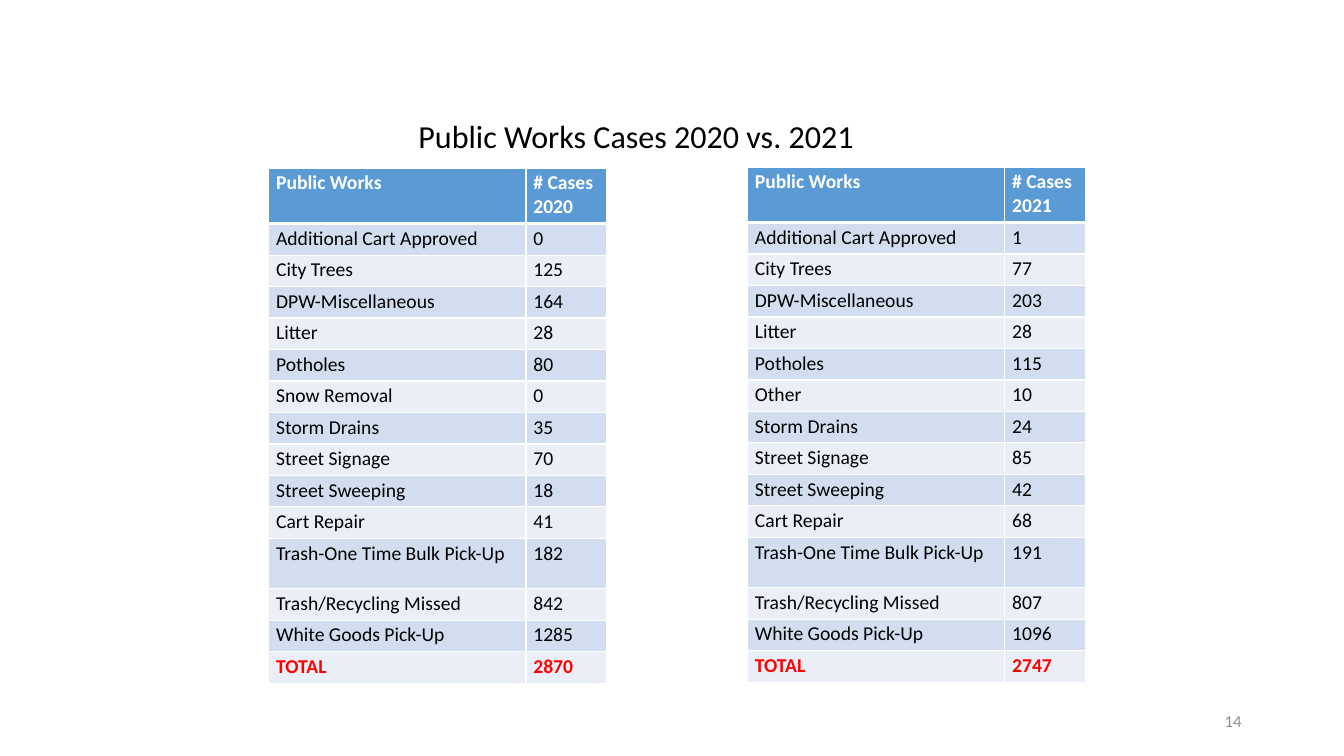
from lxml.etree import SubElement
from pptx import Presentation
from pptx.dml.color import RGBColor
from pptx.enum.text import MSO_ANCHOR, PP_ALIGN
from pptx.oxml.ns import qn
from pptx.util import Pt

PX = 9525
FONT = "Calibri"
WHITE = RGBColor(0xFF, 0xFF, 0xFF)
BLACK = RGBColor(0x00, 0x00, 0x00)
RED = RGBColor(0xFF, 0x00, 0x00)
GREY = RGBColor(0x8C, 0x8C, 0x8C)
HEADER_BLUE = RGBColor(0x5B, 0x9B, 0xD5)
BAND_DARK = RGBColor(0xD2, 0xDE, 0xEF)
BAND_LIGHT = RGBColor(0xEA, 0xEF, 0xF7)

COLUMN_WIDTHS = (245, 77)
HEADER_HEIGHT, ROW_HEIGHT, TALL_HEIGHT = 53, 30, 48
TALL_CATEGORY = "Trash-One Time Bulk Pick-Up"
CELL_FORMAT = {"margin_left": 7 * PX, "margin_right": 7 * PX,
               "margin_top": 3 * PX, "margin_bottom": 3 * PX}
HEADER_FONT = {"name": FONT, "size": Pt(14), "bold": True}
BODY_FONT = {**HEADER_FONT, "bold": False}

CASES_2020 = [
    ("Additional Cart Approved", 0), ("City Trees", 125),
    ("DPW-Miscellaneous", 164), ("Litter", 28), ("Potholes", 80),
    ("Snow Removal", 0), ("Storm Drains", 35), ("Street Signage", 70),
    ("Street Sweeping", 18), ("Cart Repair", 41), (TALL_CATEGORY, 182),
    ("Trash/Recycling Missed", 842), ("White Goods Pick-Up", 1285),
    ("TOTAL", 2870),
]
COUNTS_2021 = (1, 77, 203, 28, 115, 10, 24, 85, 42, 68, 191, 807, 1096, 2747)
CASES_2021 = [("Other" if category == "Snow Removal" else category, count)
              for (category, _), count in zip(CASES_2020, COUNTS_2021)]


def apply_format(target, values):
    for name, value in values.items():
        setattr(target, name, value)


def add_label(slide, box, wording, color, font, frame_format, paragraph_format):
    label = slide.shapes.add_textbox(*(length * PX for length in box))
    frame = label.text_frame
    apply_format(frame, {"word_wrap": True, **frame_format})
    paragraph = frame.paragraphs[0]
    apply_format(paragraph, paragraph_format)
    run = paragraph.add_run()
    run.text = wording
    apply_format(run.font, {"name": FONT, **font})
    run.font.color.rgb = color


def add_title(slide, box):
    add_label(slide, box, "Public Works Cases 2020 vs. 2021", BLACK,
              {"size": Pt(22.9)},
              {"vertical_anchor": MSO_ANCHOR.BOTTOM,
               "margin_left": 6 * PX, "margin_right": 6 * PX,
               "margin_top": 3 * PX, "margin_bottom": 3 * PX},
              {"alignment": PP_ALIGN.CENTER, "line_spacing": 0.9})


def add_page_number(slide, box):
    add_label(slide, box, "14", GREY, {"size": Pt(12)},
              {"vertical_anchor": MSO_ANCHOR.MIDDLE},
              {"alignment": PP_ALIGN.RIGHT})


def add_borders(cell, widths):
    properties = cell._tc.get_or_add_tcPr()
    for position, (side, width) in enumerate(widths.items()):
        border = SubElement(properties, qn(f"a:ln{side}"), w=str(Pt(width)))
        fill = SubElement(border, qn("a:solidFill"))
        SubElement(fill, qn("a:srgbClr"), val=str(WHITE))
        properties.insert(position, border)


def fill_cell(cell, wording, background, color, font, borders):
    apply_format(cell, CELL_FORMAT)
    cell.fill.solid()
    cell.fill.fore_color.rgb = background
    add_borders(cell, borders)
    cell.text = wording
    for paragraph in cell.text_frame.paragraphs:
        for run in paragraph.runs:
            apply_format(run.font, font)
            run.font.color.rgb = color


def add_cases_table(slide, left, top, year, cases):
    heights = [HEADER_HEIGHT] + [
        TALL_HEIGHT if category == TALL_CATEGORY else ROW_HEIGHT
        for category, _ in cases]
    table = slide.shapes.add_table(
        len(heights), len(COLUMN_WIDTHS), left * PX, top * PX,
        sum(COLUMN_WIDTHS) * PX, sum(heights) * PX).table
    for column, width in zip(table.columns, COLUMN_WIDTHS):
        column.width = width * PX
    entries = [("Public Works", f"# Cases\n{year}"), *cases]
    for index, (entry, height) in enumerate(zip(entries, heights)):
        table.rows[index].height = height * PX
        borders = {"L": 1, "R": 1, "T": 3 if index == 1 else 1,
                   "B": 3 if index == 0 else 1}
        if index == 0:
            background, color, font = HEADER_BLUE, WHITE, HEADER_FONT
        else:
            background = BAND_DARK if index % 2 else BAND_LIGHT
            is_total = entry[0] == "TOTAL"
            color = RED if is_total else BLACK
            font = HEADER_FONT if is_total else BODY_FONT
        for column, value in enumerate(entry):
            fill_cell(table.cell(index, column), str(value),
                      background, color, font, borders)


def main():
    presentation = Presentation()
    apply_format(presentation, {"slide_width": 1280 * PX,
                                "slide_height": 720 * PX})
    slide = presentation.slides.add_slide(presentation.slide_layouts[6])
    add_title(slide, (285, 101, 642, 50))
    add_page_number(slide, (904, 667, 288, 38))
    add_cases_table(slide, 256, 160, 2020, CASES_2020)
    add_cases_table(slide, 712, 159, 2021, CASES_2021)
    presentation.save("out.pptx")


if __name__ == "__main__":
    main()
